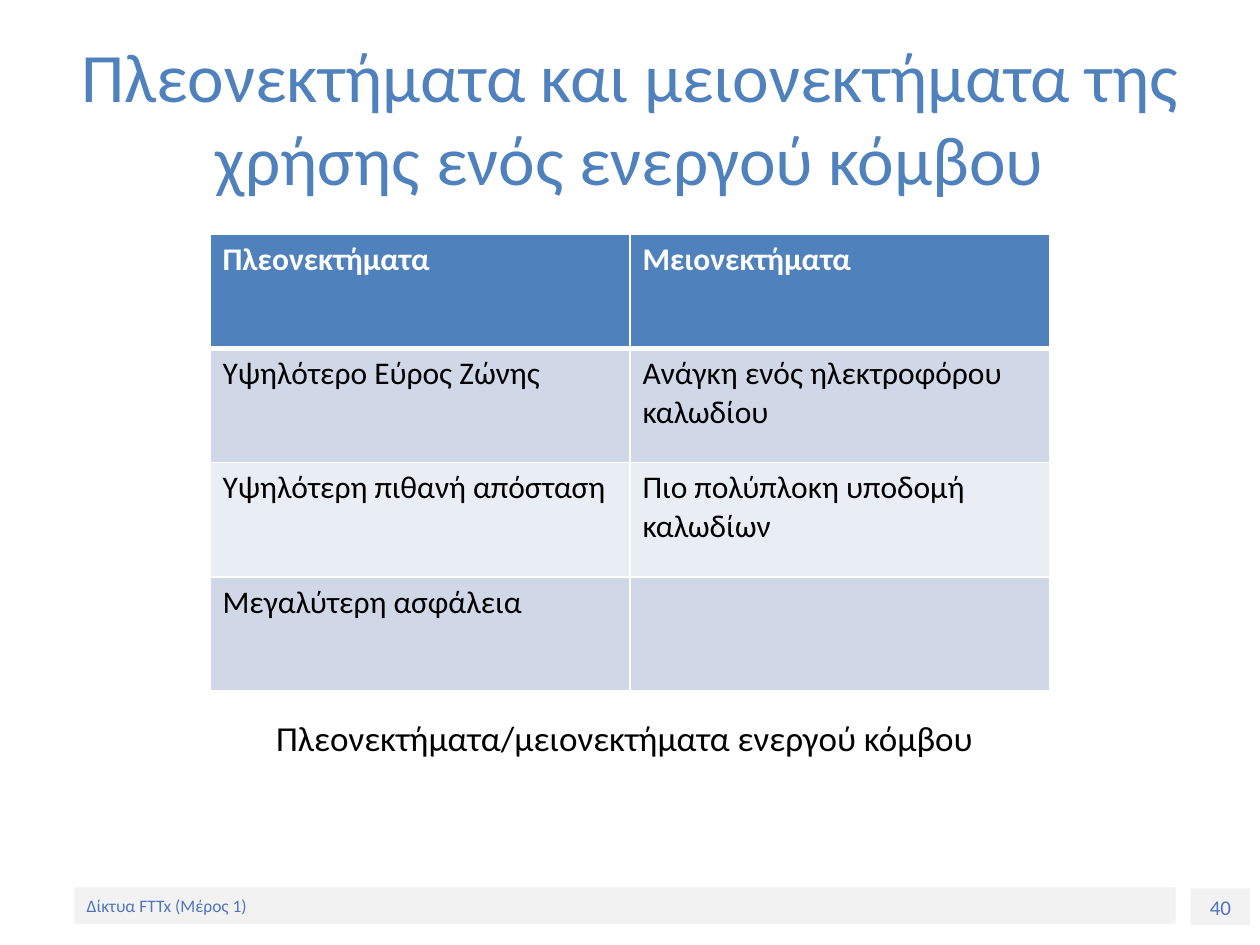
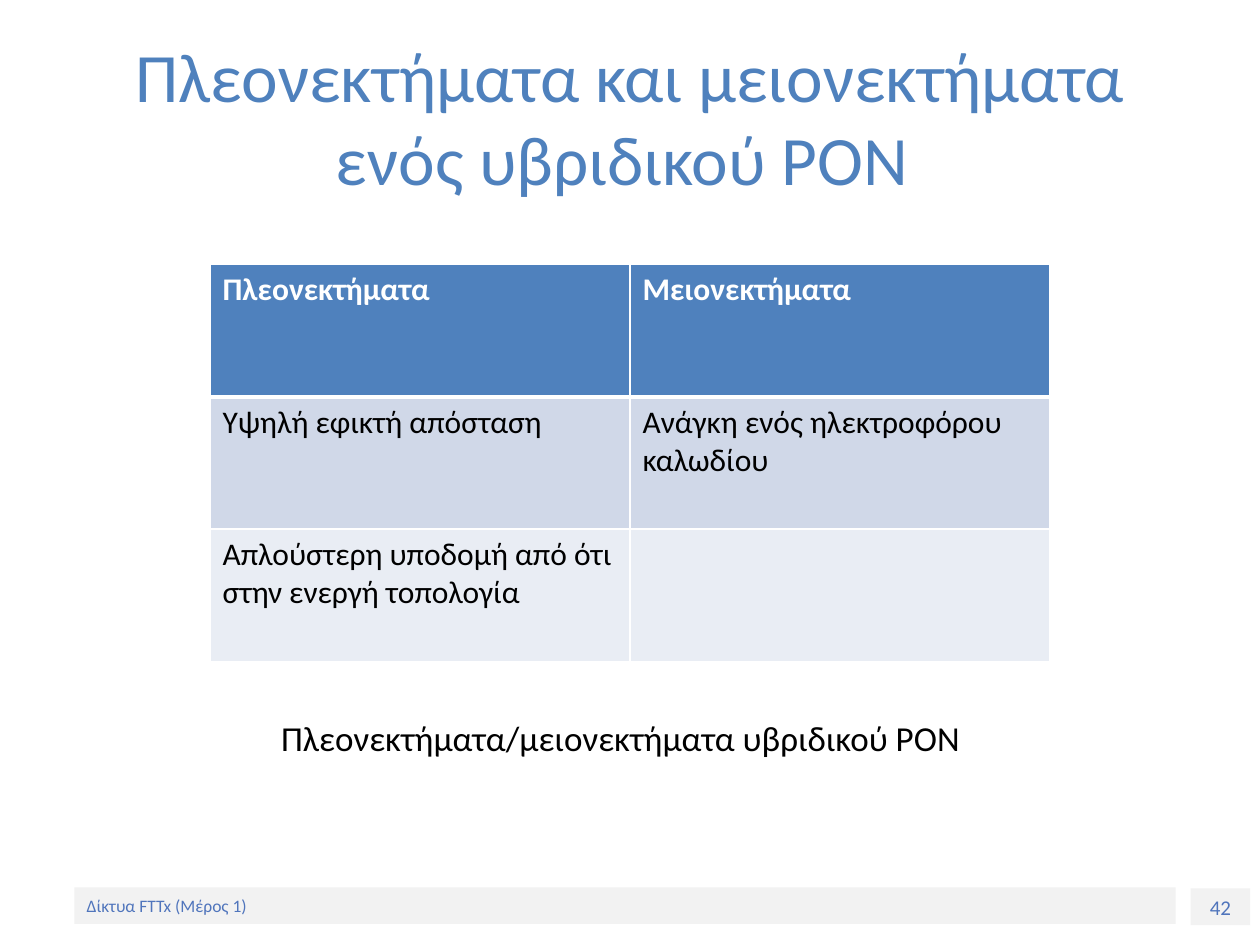
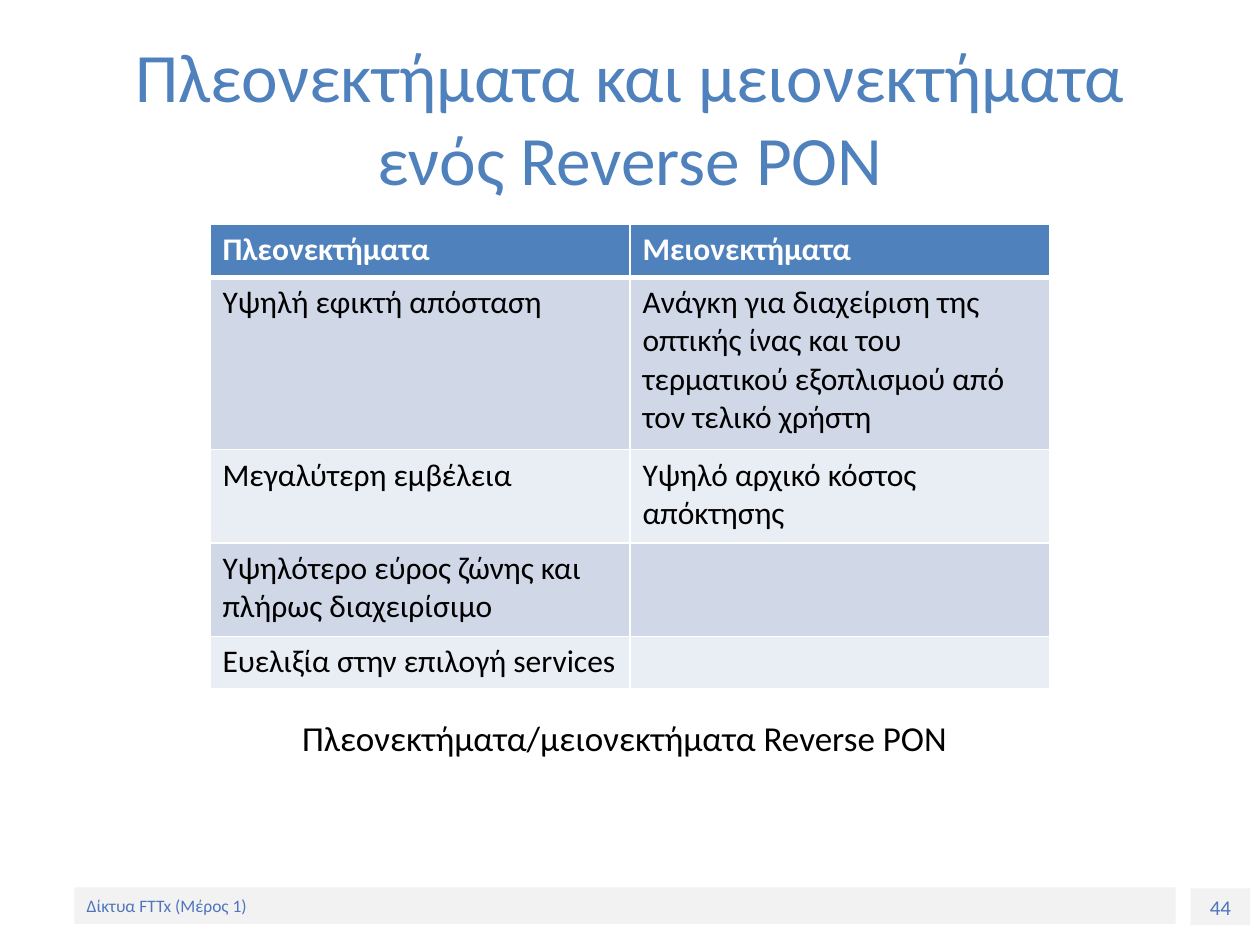
from lxml import etree
from pptx import Presentation
from pptx.dml.color import RGBColor
from pptx.enum.shapes import MSO_SHAPE
from pptx.enum.text import MSO_ANCHOR, MSO_AUTO_SIZE, PP_ALIGN
from pptx.oxml.ns import qn
from pptx.util import Pt

RECT = MSO_SHAPE.RECTANGLE
TOP, MIDDLE = MSO_ANCHOR.TOP, MSO_ANCHOR.MIDDLE
LEFT, CENTER = PP_ALIGN.LEFT, PP_ALIGN.CENTER
NO_FIT = MSO_AUTO_SIZE.NONE

BLUE = RGBColor(0x4F, 0x81, 0xBD)
INK = RGBColor(0x50, 0x75, 0xBC)
GREY = RGBColor(0xF2, 0xF2, 0xF2)
DARK = RGBColor(0xD0, 0xD8, 0xE8)
LIGHT = RGBColor(0xE9, 0xED, 0xF4)
WHITE = RGBColor(0xFF, 0xFF, 0xFF)
BLACK = RGBColor(0, 0, 0)
FONT = "Calibri"

FOOTER = "Δίκτυα FTTx (Μέρος 1)"
HEADS = ("Πλεονεκτήματα", "Μειονεκτήματα")
COL = 240

# page number, title, caption, table top, row heights, body rows
SLIDES = [
    (40, "Πλεονεκτήματα και μειονεκτήματα της χρήσης ενός ενεργού κόμβου",
     "Πλεονεκτήματα/μειονεκτήματα ενεργού κόμβου",
     134, [65.2] * 4,
     [("Υψηλότερο Εύρος Ζώνης", "Ανάγκη ενός ηλεκτροφόρου καλωδίου"),
      ("Υψηλότερη πιθανή απόσταση", "Πιο πολύπλοκη υποδομή καλωδίων"),
      ("Μεγαλύτερη ασφάλεια", "")]),
    (42, "Πλεονεκτήματα και μειονεκτήματα ενός υβριδικού PON ",
     "Πλεονεκτήματα/μειονεκτήματα υβριδικού PON ",
     151.2, [75.6] * 3,
     [("Υψηλή εφικτή απόσταση", "Ανάγκη ενός ηλεκτροφόρου καλωδίου"),
      ("Απλούστερη υποδομή από ότι στην ενεργή τοπολογία", "")]),
    (44, "Πλεονεκτήματα και μειονεκτήματα ενός Reverse PON",
     "Πλεονεκτήματα/μειονεκτήματα Reverse PON",
     128.2, [30.2, 98.6, 53.3, 53.3, 30.2],
     [("Υψηλή εφικτή απόσταση",
       "Ανάγκη για διαχείριση της οπτικής ίνας και του τερματικού "
       "εξοπλισμού από τον τελικό χρήστη"),
      ("Μεγαλύτερη εμβέλεια", "Υψηλό αρχικό κόστος απόκτησης"),
      ("Υψηλότερο εύρος ζώνης και πλήρως διαχειρίσιμο", ""),
      ("Ευελιξία στην επιλογή services", "")]),
]


def write(frame, text, size, color, align=LEFT, anchor=TOP, bold=False):
    frame.word_wrap = True
    frame.vertical_anchor = anchor
    para = frame.paragraphs[0]
    para.text = text
    para.alignment = align
    font = para.font
    font.name, font.size, font.bold = FONT, Pt(size), bold
    font.color.rgb = color


def edge(cell, side, width):
    """Draw a white border on one side (L, R, T or B) of a cell."""
    props = cell._tc.get_or_add_tcPr()
    line = etree.SubElement(props, qn("a:ln" + side), w=str(Pt(width)))
    fill = etree.SubElement(line, qn("a:solidFill"))
    etree.SubElement(fill, qn("a:srgbClr"), val=str(WHITE))


prs = Presentation()
prs.slide_width, prs.slide_height = Pt(720), Pt(540)

for number, heading, caption, top, heights, body in SLIDES:
    slide = prs.slides.add_slide(prs.slide_layouts[5])
    shapes = slide.shapes

    title = shapes.title
    title.left, title.top = Pt(36), Pt(21.6)
    title.width, title.height = Pt(648), Pt(90)
    write(title.text_frame, heading, 39.6, BLUE, CENTER, MIDDLE)
    title.text_frame.auto_size = NO_FIT

    for left, y, width, text, size, align, anchor in (
            (680.4, 507.6, 34, str(number), 12, CENTER, TOP),
            (42.5, 507, 629.3, FOOTER, 10, LEFT, MIDDLE)):
        band = shapes.add_shape(RECT, Pt(left), Pt(y), Pt(width), Pt(21))
        band.shadow.inherit = False
        band.fill.solid()
        band.fill.fore_color.rgb = GREY
        band.line.fill.background()
        write(band.text_frame, text, size, INK, align, anchor)

    note = shapes.add_textbox(Pt(141), Pt(406), Pt(432), Pt(80))
    write(note.text_frame, caption, 20, BLACK, CENTER)

    rows = [HEADS] + body
    table = shapes.add_table(len(rows), 2, Pt(120), Pt(top),
                             Pt(2 * COL), Pt(sum(heights))).table
    for col in table.columns:
        col.width = Pt(COL)
    for r, (height, row) in enumerate(zip(heights, rows)):
        table.rows[r].height = Pt(height)
        head = r == 0
        for c, text in enumerate(row):
            cell = table.cell(r, c)
            edge(cell, "L", 1)
            edge(cell, "R", 1)
            edge(cell, "T", 3 if r == 1 else 1)
            edge(cell, "B", 3 if head else 1)
            cell.fill.solid()
            cell.fill.fore_color.rgb = BLUE if head else DARK if r % 2 else LIGHT
            if text:
                write(cell.text_frame, text, 18, WHITE if head else BLACK, bold=head)

prs.save("out.pptx")
